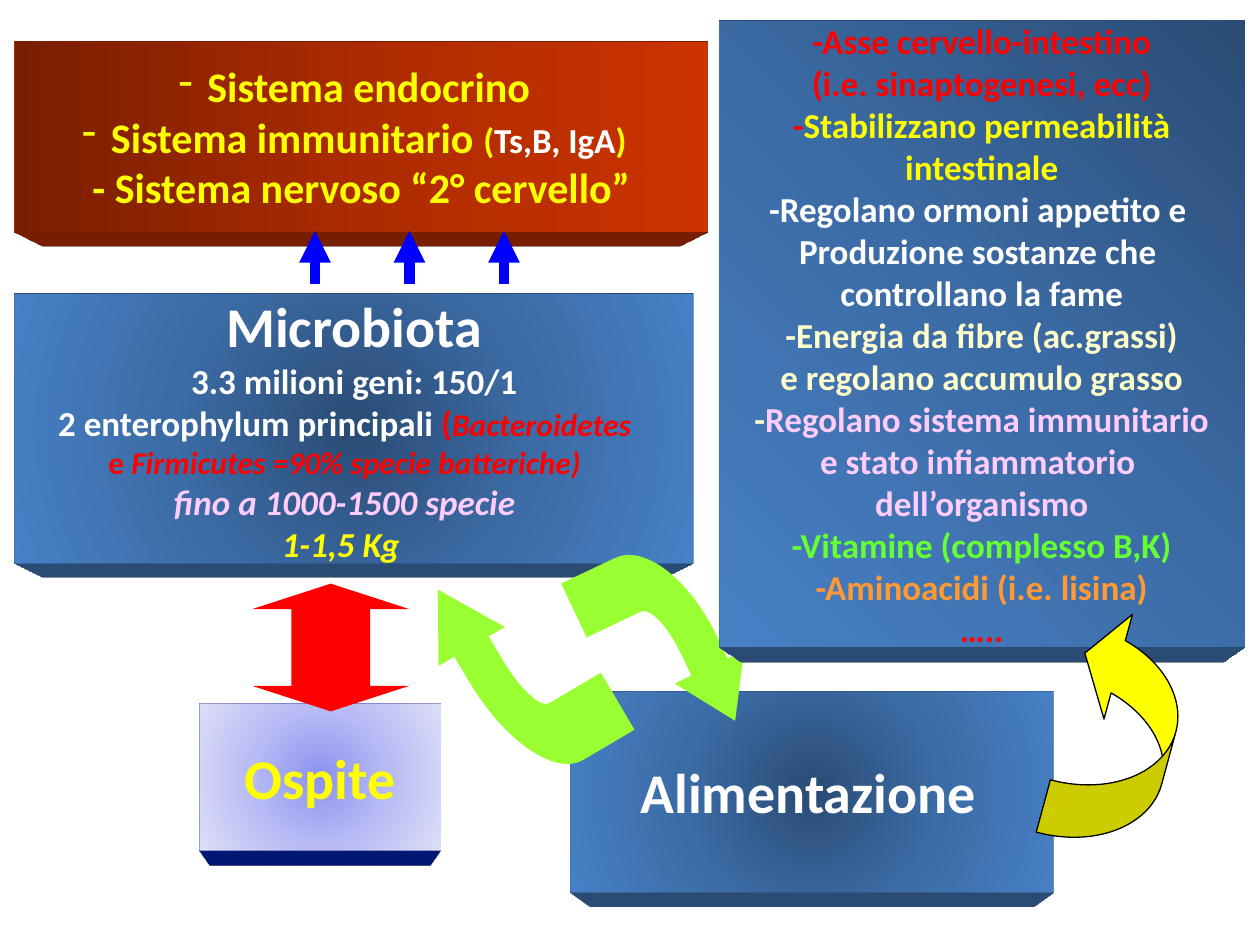
from dataclasses import dataclass

from lxml import etree
from pptx import Presentation
from pptx import util as u
from pptx.dml.color import RGBColor
from pptx.enum import shapes, text
from pptx.oxml import parse_xml
from pptx.oxml.ns import nsdecls, qn

Pt = u.Pt


@dataclass(frozen=True)
class Theme:
    font: str = "Calibri"
    white: str = "FFFFFF"
    yellow: str = "FFFF00"
    red: str = "FF0000"
    pink: str = "FFCCFF"
    cream: str = "FFFFCC"
    green: str = "66FF33"
    orange: str = "FF9933"
    lime: str = "99FF33"
    blue: str = "0000FF"
    black: str = "000000"
    steel: tuple = ("2A4C75", "3C6CA6", "4780C5")
    rust: tuple = ("791E00", "AC2B00", "CC3300")
    lilac: tuple = ("8C92F2", "BABDF5", "DEDFF9")
    steel_edge: str = "4780C5"
    rust_edge: str = "CC3300"
    lilac_edge: str = "0029C2"
    title: int = 32
    head: int = 24
    body: int = 20
    small: int = 18


T = Theme()
CURVE_STEPS = 16
BENT_ARROW = [
    [(100, 28)], [(70, 0)], [(70, 13.5)], [(57.5, 13.5)],
    [(25.8, 13.5), (0, 32.6), (0, 56.3)],
    [(0, 100)], [(30, 100)], [(30, 56.3)],
    [(30, 48.8), (42.3, 42.8), (57.5, 42.8)],
    [(70, 42.8)], [(70, 56.3)],
]


def rgb(value):
    return RGBColor.from_string(value)


def fill_gradient(s, colors, angle):
    stops = "".join(
        f'<a:gs pos="{i * 50000}"><a:srgbClr val="{c}"/></a:gs>'
        for i, c in enumerate(colors))
    if angle is None:
        way = ('<a:path path="circle"><a:fillToRect l="50000" t="50000" '
               'r="50000" b="50000"/></a:path>')
    else:
        way = f'<a:lin ang="{angle * 60000}" scaled="1"/>'
    s.fill.background()
    no_fill = s._element.spPr.find(qn("a:noFill"))
    no_fill.getparent().replace(no_fill, parse_xml(
        f'<a:gradFill {nsdecls("a")} rotWithShape="1"><a:gsLst>{stops}'
        f'</a:gsLst>{way}</a:gradFill>'))


def extrude(s, edge):
    s._element.spPr.append(parse_xml(
        f'<a:scene3d {nsdecls("a")}><a:camera prst="legacyPerspectiveBottom"/>'
        '<a:lightRig rig="legacyFlat3" dir="t"/></a:scene3d>'))
    s._element.spPr.append(parse_xml(
        f'<a:sp3d {nsdecls("a")} extrusionH="887400" prstMaterial="legacyMatte">'
        '<a:bevelT w="13500" h="13500" prst="angle"/>'
        '<a:bevelB w="13500" h="13500" prst="angle"/>'
        f'<a:extrusionClr><a:srgbClr val="{edge}"/></a:extrusionClr></a:sp3d>'))


def write_lines(s, lines):
    tf = s.text_frame
    for name, value in dict(word_wrap=False,
                            vertical_anchor=text.MSO_ANCHOR.MIDDLE).items():
        setattr(tf, name, value)
    for i, (runs, layout) in enumerate(lines):
        p = tf.paragraphs[0] if i == 0 else tf.add_paragraph()
        p.alignment = text.PP_ALIGN.CENTER
        pPr = p._p.get_or_add_pPr()
        for name, value in layout.items():
            if name == "bullet":
                etree.SubElement(pPr, qn("a:buFontTx"))
                etree.SubElement(pPr, qn("a:buChar")).set("char", value)
            else:
                pPr.set(name, str(Pt(value)))
        for words, size, color, italic in runs:
            r = p.add_run()
            r.text = words
            for name, value in dict(name=T.font, size=Pt(size), bold=True,
                                    italic=italic).items():
                setattr(r.font, name, value)
            r.font.color.rgb = rgb(color)


def run(words, size, color, italic=False):
    return words, size, color, italic


def line(*runs, **layout):
    return runs, layout


def add_slab(slide, box, colors, edge, lines, angle=None):
    s = slide.shapes.add_shape(shapes.MSO_SHAPE.RECTANGLE, *map(Pt, box))
    s.line.fill.background()
    s.shadow.inherit = False
    fill_gradient(s, colors, angle)
    extrude(s, edge)
    write_lines(s, lines)


def add_arrow(slide, kind, box, rotation, color, adjustments, outline=None):
    s = slide.shapes.add_shape(kind, *map(Pt, box))
    s.shadow.inherit = False
    s.rotation = rotation
    s.fill.solid()
    s.fill.fore_color.rgb = rgb(color)
    for i, value in enumerate(adjustments):
        s.adjustments[i] = value
    if outline:
        s.line.color.rgb = rgb(outline)
        s.line.width = Pt(0.75)
    else:
        s.line.fill.background()


def bezier(a, b, c, d):
    for i in range(1, CURVE_STEPS + 1):
        t = i / CURVE_STEPS
        yield tuple((1 - t) ** 3 * w + 3 * t * (1 - t) ** 2 * x
                    + 3 * t * t * (1 - t) * y + t ** 3 * z
                    for w, x, y, z in zip(a, b, c, d))


def add_bent_arrow(slide, box, rotation):
    left, top, width, height = box
    points = []
    for step in BENT_ARROW:
        points += bezier(points[-1], *step) if len(step) == 3 else step
    places = [(Pt(left + x * width / 100), Pt(top + y * height / 100))
              for x, y in points]
    builder = slide.shapes.build_freeform(*places[0])
    builder.add_line_segments(places[1:], close=True)
    s = builder.convert_to_shape()
    s.shadow.inherit = False
    s.rotation = rotation
    s.fill.solid()
    s.fill.fore_color.rgb = rgb(T.lime)
    s.line.fill.background()


def add_up_arrows(slide, box, count):
    left, top, width, height = box
    for i in range(count):
        x = Pt(left + i * width / (count - 1))
        s = slide.shapes.add_connector(shapes.MSO_CONNECTOR.STRAIGHT,
                                       x, Pt(top + height), x, Pt(top))
        s.line.color.rgb = rgb(T.blue)
        s.line.width = Pt(6)
        etree.SubElement(s.line._get_or_add_ln(), qn("a:tailEnd")).set("type", "triangle")
        etree.SubElement(s._element.spPr, qn("a:effectLst"))


def add_microbiota(slide, box):
    add_slab(slide, box, T.steel, T.steel_edge, [
        line(run("Microbiota", T.title, T.white)),
        line(run("3.3 milioni geni: 150/1", T.body, T.white)),
        line(run("2 enterophylum principali ", T.body, T.white),
             run("(", T.body, T.red),
             run("Bacteroidetes", T.small, T.red, True), marR=11),
        line(run("e ", T.small, T.red),
             run("Firmicutes =90% specie batteriche)", T.small, T.red, True)),
        line(run("fino a 1000-1500 specie", T.body, T.pink, True)),
        line(run("1-1,5 Kg ", T.body, T.yellow, True)),
    ])


def add_systems(slide, box):
    bullet = dict(marL=8.5, indent=-16.5, bullet="-")
    add_slab(slide, box, T.rust, T.rust_edge, [
        line(run("Sistema endocrino", T.head, T.yellow), **bullet),
        line(run("Sistema immunitario ", T.head, T.yellow),
             run("(", T.body, T.yellow), run("Ts,B, IgA", T.body, T.white),
             run(")", T.body, T.yellow), **bullet),
        line(run("- Sistema nervoso “2° cervello”", T.head, T.yellow)),
    ], angle=0)


def add_functions(slide, box):
    rows = [
        [("-Asse cervello-intestino", T.red)],
        [("(i.e. sinaptogenesi, ecc)", T.red)],
        [("-", T.red), ("Stabilizzano permeabilità", T.yellow)],
        [("intestinale", T.yellow)],
        [("-Regolano ormoni appetito e ", T.white)],
        [("Produzione sostanze che ", T.white)],
        [("controllano la fame", T.white)],
        [("-Energia da fibre (ac.grassi)", T.cream)],
        [("e regolano accumulo grasso", T.cream)],
        [("-", T.cream), ("Regolano sistema immunitario", T.pink)],
        [("e stato infiammatorio ", T.pink)],
        [("dell’organismo", T.pink)],
        [("-Vitamine (complesso B,K)", T.green)],
        [("-Aminoacidi (i.e. lisina)", T.orange)],
        [("…..", T.red)],
    ]
    add_slab(slide, box, T.steel, T.steel_edge,
             [line(*(run(w, T.body, c) for w, c in row)) for row in rows],
             angle=135)


def main():
    prs = Presentation()
    prs.slide_width, prs.slide_height = Pt(720), Pt(540)
    slide = prs.slides.add_slide(prs.slide_layouts[6])
    add_microbiota(slide, (8.5, 168, 388, 153.5))
    add_slab(slide, (326, 395, 276, 114), T.steel, T.steel_edge,
             [line(run("Alimentazione", T.title, T.white), run(" ", T.small, T.white))])
    add_bent_arrow(slide, (323.5, 329, 113.5, 78), 64.6)
    add_bent_arrow(slide, (234, 343.5, 126, 78), 239.5)
    add_systems(slide, (8.5, 24, 396, 108))
    add_slab(slide, (114, 402, 138, 84), T.lilac, T.lilac_edge,
             [line(run("Ospite", T.title, T.yellow))])
    add_arrow(slide, shapes.MSO_SHAPE.LEFT_RIGHT_ARROW, (152.5, 325, 73, 90),
              90, T.red, (0.5, 0.2))
    add_up_arrows(slide, (180, 132, 108, 30), 3)
    add_functions(slide, (411, 12, 300, 358))
    add_arrow(slide, shapes.MSO_SHAPE.CURVED_UP_ARROW, (571.5, 386.5, 137, 62),
              285.2, T.yellow, (0.5, 1, 0.33), T.black)
    prs.save("out.pptx")


if __name__ == "__main__":
    main()
